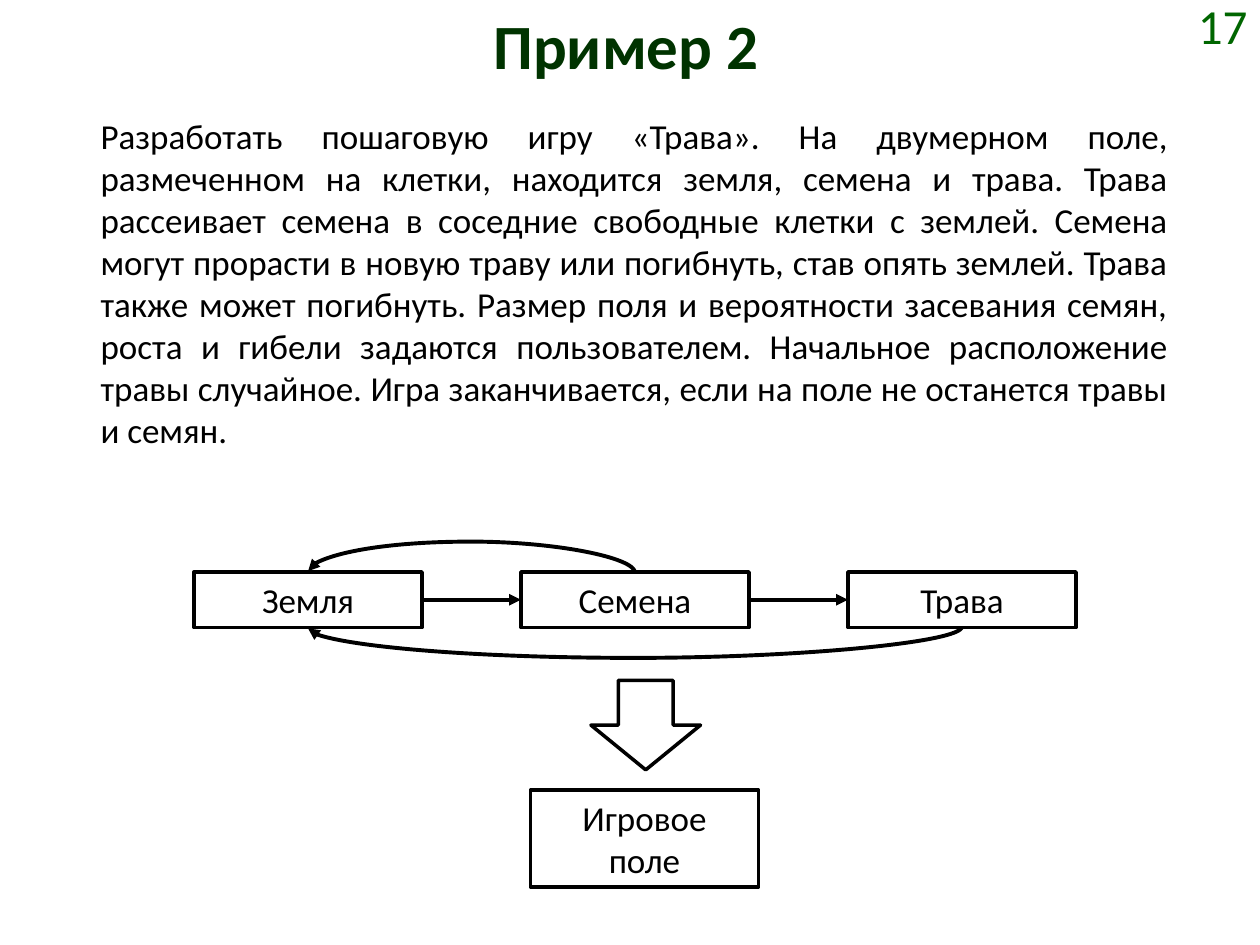
from dataclasses import dataclass

from lxml.etree import SubElement
from pptx import Presentation
from pptx.dml.color import RGBColor
from pptx.enum.shapes import MSO_CONNECTOR, MSO_SHAPE
from pptx.enum.text import MSO_ANCHOR, MSO_AUTO_SIZE, PP_ALIGN
from pptx.oxml.ns import qn
from pptx.shapes.autoshape import Shape
from pptx.shapes.connector import Connector
from pptx.slide import Slide
from pptx.util import Inches, Pt


@dataclass(frozen=True)
class Theme:
    font: str = "Calibri"
    heading: str = "003300"
    number: str = "006600"
    ink: str = "000000"
    paper: str = "FFFFFF"
    title_size: int = 36
    number_size: int = 28
    body_size: int = 20
    outline: float = 2
    link: float = 2.25


@dataclass(frozen=True)
class Frame:
    """A place on the slide grid, in columns and rows."""
    col: float
    row: float
    cols: float
    rows: float

    @property
    def emu(self) -> tuple[int, int, int, int]:
        return (round(self.col * COL), round(self.row * ROW),
                round(self.cols * COL), round(self.rows * ROW))


THEME = Theme()
WIDTH, HEIGHT = Inches(10), Inches(7.5)
COL, ROW = WIDTH / 100, HEIGHT / 75

STATES = ("Земля", "Семена", "Трава")
STATE_LEFT, STATE_TOP, STATE_PITCH = 15.4, 45.4, 25.95
BOX_COLS, STATE_ROWS = 18.1, 4.4
BULGE = 18  # depth of a curved link, in multiples of its one-point width

TASK = (
    "Разработать пошаговую игру «Трава». На двумерном поле, размеченном на клетки, "
    "находится земля, семена и трава. Трава рассеивает семена в соседние свободные "
    "клетки с землей. Семена могут прорасти в новую траву или погибнуть, став опять "
    "землей. Трава также может погибнуть. Размер поля и вероятности засевания семян, "
    "роста и гибели задаются пользователем. Начальное расположение травы случайное. "
    "Игра заканчивается, если на поле не останется травы и семян."
)


def write(sp: Shape, text: str, *, size: float = THEME.body_size,
          color: str = THEME.ink, bold: bool = False,
          align: PP_ALIGN = PP_ALIGN.CENTER, anchor: MSO_ANCHOR = MSO_ANCHOR.TOP,
          before: float = 0, grow: bool = False) -> None:
    tf = sp.text_frame
    tf.word_wrap = True
    tf.vertical_anchor = anchor
    tf.auto_size = MSO_AUTO_SIZE.SHAPE_TO_FIT_TEXT if grow else MSO_AUTO_SIZE.NONE
    p = tf.paragraphs[0]
    p.alignment = align
    p.space_before = Pt(before)
    r = p.add_run()
    r.text = text
    r.font.name = THEME.font
    r.font.size = Pt(size)
    r.font.bold = bold
    r.font.color.rgb = RGBColor.from_string(color)


def add_outlined(s: Slide, kind: MSO_SHAPE, frame: Frame) -> Shape:
    sp = s.shapes.add_shape(kind, *frame.emu)
    sp.shadow.inherit = False
    sp.fill.solid()
    sp.fill.fore_color.rgb = RGBColor.from_string(THEME.paper)
    sp.line.color.rgb = RGBColor.from_string(THEME.ink)
    sp.line.width = Pt(THEME.outline)
    return sp


def add_box(s: Slide, text: str, frame: Frame) -> Shape:
    sp = add_outlined(s, MSO_SHAPE.RECTANGLE, frame)
    write(sp, text, before=12, grow=True)
    return sp


def style_link(link: Connector) -> None:
    link.line.color.rgb = RGBColor.from_string(THEME.ink)
    link.line.width = Pt(THEME.link)
    SubElement(link.line._get_or_add_ln(), qn("a:tailEnd"), type="triangle")
    SubElement(link._element.spPr, qn("a:effectLst"))


def add_straight_link(s: Slide, source: Shape, target: Shape) -> None:
    link = s.shapes.add_connector(MSO_CONNECTOR.STRAIGHT, 0, 0, 0, 0)
    link.begin_connect(source, 3)
    link.end_connect(target, 1)
    style_link(link)


def add_return_link(s: Slide, source: Shape, target: Shape, above: bool) -> None:
    """Curve back from source to target, over or under the row of boxes."""
    start = source.left + source.width // 2
    end = target.left + target.width // 2
    mid_x, half_span, half_width = (start + end) // 2, (start - end) // 2, Pt(1) // 2
    mid_y = source.top if above else source.top + source.height
    rise = -half_span if above else half_span
    link = s.shapes.add_connector(MSO_CONNECTOR.CURVE,
                                  mid_x - half_width, mid_y - rise,
                                  mid_x + half_width, mid_y + rise)
    spPr = link._element.spPr
    spPr.find(qn("a:xfrm")).set("rot", str((270 if above else 90) * 60000))
    guides = spPr.find(qn("a:prstGeom")).find(qn("a:avLst"))
    SubElement(guides, qn("a:gd"), name="adj1", fmla=f"val {BULGE * 100000}")
    style_link(link)


def main() -> None:
    prs = Presentation()
    prs.slide_width, prs.slide_height = WIDTH, HEIGHT
    s = prs.slides.add_slide(prs.slide_layouts[6])

    write(s.shapes.add_textbox(*Frame(4.7, 0, 90, 9.4).emu), "Пример 2",
          size=THEME.title_size, color=THEME.heading, bold=True)
    write(s.shapes.add_textbox(*Frame(89.8, 0, 10.2, 3.9).emu), "17",
          size=THEME.number_size, color=THEME.number,
          align=PP_ALIGN.RIGHT, anchor=MSO_ANCHOR.MIDDLE)
    write(s.shapes.add_textbox(*Frame(7, 8.6, 86.7, 27.9).emu), TASK,
          align=PP_ALIGN.JUSTIFY, before=12, grow=True)

    earth, seeds, grass = [
        add_box(s, name, Frame(STATE_LEFT + i * STATE_PITCH, STATE_TOP,
                               BOX_COLS, STATE_ROWS))
        for i, name in enumerate(STATES)
    ]
    add_straight_link(s, earth, seeds)
    add_straight_link(s, seeds, grass)
    add_return_link(s, seeds, earth, above=True)
    add_return_link(s, grass, earth, above=False)

    add_box(s, "Игровое поле", Frame(42.1, 62.7, BOX_COLS, 7.7))
    add_outlined(s, MSO_SHAPE.DOWN_ARROW, Frame(46.9, 54, 8.7, 7.1))

    prs.save("out.pptx")


if __name__ == "__main__":
    main()
